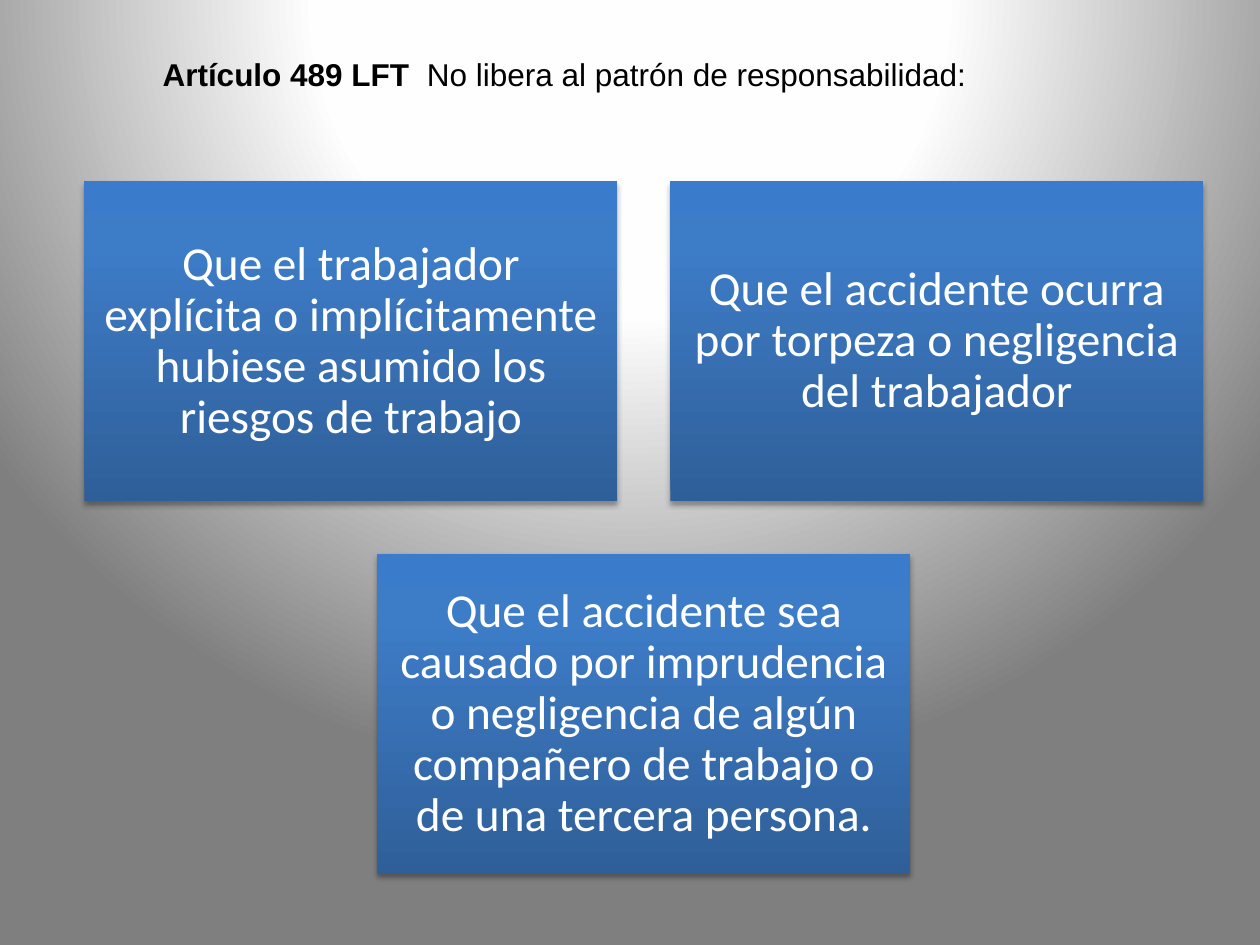
import pptx
import pptx.dml.color
import pptx.enum.shapes
import pptx.enum.text
import pptx.oxml
import pptx.oxml.ns
import pptx.util
from pptx.util import Inches

COLORS = {
    "ink": "000000",
    "card_text": "FFFFFF",
    "card_low": "2F5F99",
    "card_mid": "3D7CC7",
    "card_high": "3A7CCB",
    "glow": "FFFFFF",
    "glow_mid": "FEFEFE",
    "edge": "7F7F7F",
}
CARD_W, CARD_H, GAP = 4.23, 2.54, 0.42
CARDS_LEFT, CARDS_TOP = 0.67, 1.44
CARDS_PER_ROW = 2
CARDS = [
    "Que el trabajador explícita o implícitamente hubiese asumido los riesgos de trabajo",
    "Que el accidente ocurra por torpeza o negligencia del trabajador",
    "Que el accidente sea causado por imprudencia o negligencia de algún "
    "compañero de trabajo o de una tercera persona.",
]


def apply_gradient(fill, element, stops, direction):
    """Fill with (percent, color name) stops; direction is a:lin or a:path XML."""
    fill.gradient()
    stop_xml = "".join(
        f'<a:gs pos="{percent * 1000}"><a:srgbClr val="{COLORS[name]}"/></a:gs>'
        for percent, name in stops
    )
    gradient = pptx.oxml.parse_xml(
        f'<a:gradFill {pptx.oxml.ns.nsdecls("a")} rotWithShape="1">'
        f"<a:gsLst>{stop_xml}</a:gsLst>{direction}</a:gradFill>"
    )
    old = element.xpath(".//a:gradFill")[0]
    old.getparent().replace(old, gradient)


def add_shadow(shape):
    shape.shadow.inherit = False
    effects = shape.element.xpath("./p:spPr/a:effectLst")[0]
    effects.append(pptx.oxml.parse_xml(
        f'<a:outerShdw {pptx.oxml.ns.nsdecls("a")} blurRad="40000" dist="23000" '
        f'dir="5400000" rotWithShape="0"><a:srgbClr val="{COLORS["ink"]}">'
        '<a:alpha val="35000"/></a:srgbClr></a:outerShdw>'
    ))


def add_text(para, text, *, font, size, color, bold=False):
    span = para.add_run()
    span.text = text
    span.font.name = font
    span.font.size = pptx.util.Pt(size)
    span.font.bold = bold
    span.font.color.rgb = pptx.dml.color.RGBColor.from_string(COLORS[color])


def paint_background(page):
    apply_gradient(
        page.background.fill, page.element,
        [(0, "glow"), (40, "glow_mid"), (100, "edge")],
        '<a:path path="circle"><a:fillToRect l="50000" t="-80000" '
        'r="50000" b="180000"/></a:path>',
    )


def place_title(page, left, top, width, height):
    title = page.shapes.title
    title.left, title.top = Inches(left), Inches(top)
    title.width, title.height = Inches(width), Inches(height)
    frame = title.text_frame
    frame.word_wrap = True
    frame.auto_size = pptx.enum.text.MSO_AUTO_SIZE.NONE
    frame.vertical_anchor = pptx.enum.text.MSO_ANCHOR.TOP
    para = frame.paragraphs[0]
    para.alignment = pptx.enum.text.PP_ALIGN.JUSTIFY
    title.element.xpath(".//a:pPr")[0].set("indent", str(Inches(0.2)))
    style = {"font": "Arial", "size": 18, "color": "ink"}
    add_text(para, "Artículo 489 LFT  ", bold=True, **style)
    add_text(para, "No libera al patrón de responsabilidad:", **style)


def add_card(page, text, left, top, width, height):
    card = page.shapes.add_shape(
        pptx.enum.shapes.MSO_SHAPE.RECTANGLE,
        Inches(left), Inches(top), Inches(width), Inches(height),
    )
    apply_gradient(
        card.fill, card.element,
        [(0, "card_low"), (80, "card_mid"), (100, "card_high")],
        '<a:lin ang="16200000" scaled="0"/>',
    )
    card.line.fill.background()
    add_shadow(card)
    frame = card.text_frame
    frame.word_wrap = True
    frame.vertical_anchor = pptx.enum.text.MSO_ANCHOR.MIDDLE
    frame.margin_left = frame.margin_right = Inches(0.11)
    frame.margin_top = frame.margin_bottom = Inches(0.11)
    para = frame.paragraphs[0]
    para.alignment = pptx.enum.text.PP_ALIGN.CENTER
    para.line_spacing = 0.9
    add_text(para, text, font="Calibri", size=27, color="card_text")


def add_cards(page, left, top):
    """Lay the cards out in rows, centring a row that is not full."""
    for start in range(0, len(CARDS), CARDS_PER_ROW):
        row = CARDS[start:start + CARDS_PER_ROW]
        indent = (CARDS_PER_ROW - len(row)) * (CARD_W + GAP) / 2
        row_top = top + start // CARDS_PER_ROW * (CARD_H + GAP)
        for column, text in enumerate(row):
            card_left = left + indent + column * (CARD_W + GAP)
            add_card(page, text, card_left, row_top, CARD_W, CARD_H)


def main():
    deck = pptx.Presentation()
    deck.slide_width, deck.slide_height = Inches(10), Inches(7.5)
    page = deck.slides.add_slide(deck.slide_layouts.get_by_name("Title Only"))
    paint_background(page)
    place_title(page, 0.99, 0.39, 6.93, 0.4)
    add_cards(page, CARDS_LEFT, CARDS_TOP)
    deck.save("out.pptx")


if __name__ == "__main__":
    main()
